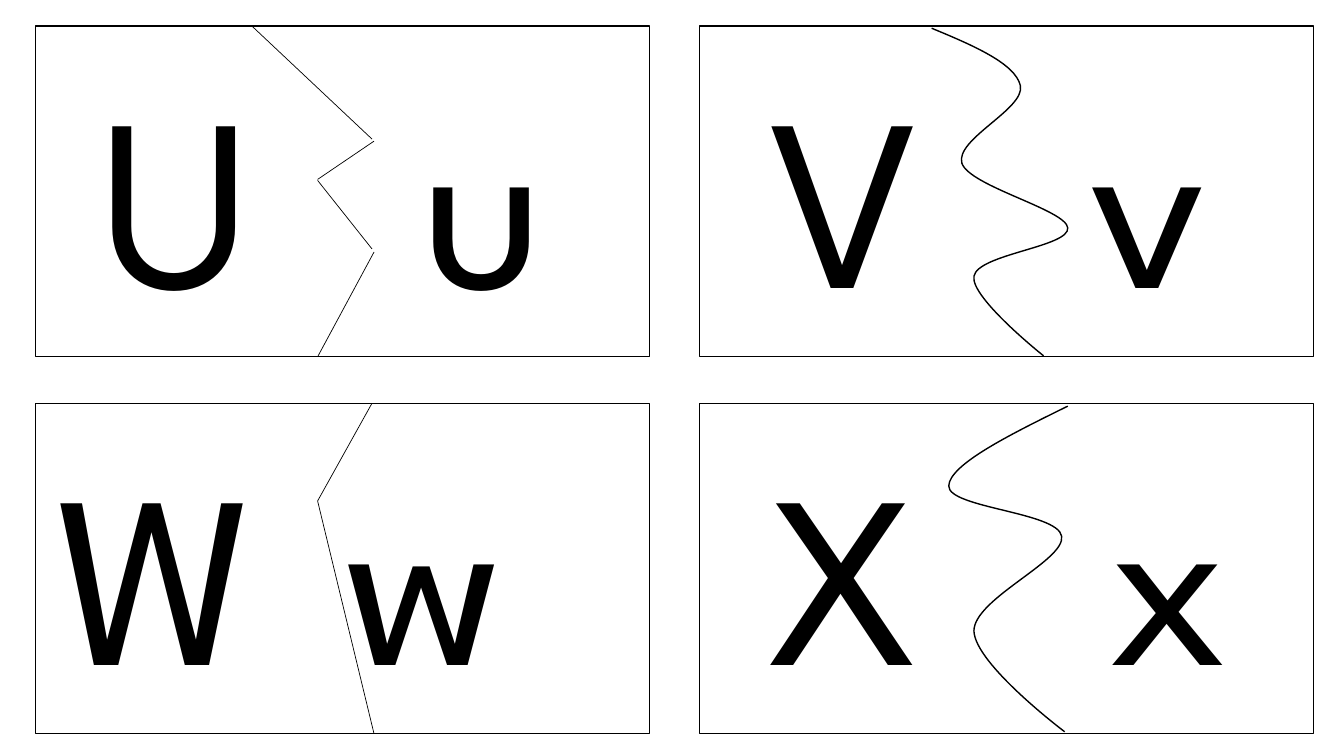
from dataclasses import dataclass

from lxml.etree import SubElement
from pptx import Presentation
from pptx.dml.color import RGBColor
from pptx.enum.shapes import MSO_CONNECTOR, MSO_SHAPE
from pptx.enum.text import MSO_AUTO_SIZE, PP_ALIGN
from pptx.oxml.ns import qn
from pptx.util import Inches, Pt

COLOURS = {"ink": "000000", "card": "FFFFFF"}
FONT = "League Spartan"
CARD_WIDTH, CARD_HEIGHT = 6.09, 3.28
LEFT, TOP = 0.35, 0.26
COLUMN_STEP, ROW_STEP = 6.59, 3.74
TEXT_INSET, TEXT_HEIGHT = 0.12, 3.05

Point = tuple[float, float]
Curve = tuple[Point, Point, Point]  # two control points and an end


@dataclass
class LetterCard:
    upper: str
    lower: str
    column: int
    row: int
    text_left: float
    text_width: float
    tab: float  # where the lower-case letter starts, inside the text area


@dataclass
class CurvedCut:
    start: Point
    curves: list[Curve]


CARDS = [
    LetterCard("U", "u", 0, 0, 0.9, 4.91, 3.18),
    LetterCard("V", "v", 1, 0, 7.53, 4.91, 3.18),
    LetterCard("W", "w", 0, 1, 0.46, 5.88, 2.85),
    LetterCard("X", "x", 1, 1, 7.53, 4.91, 3.37),
]

STRAIGHT_CUTS: list[tuple[Point, Point]] = [
    ((2.5, 0.26), (3.69, 1.38)),
    ((3.71, 1.4), (3.15, 1.78)),
    ((3.15, 1.79), (3.69, 2.47)),
    ((3.71, 2.5), (3.15, 3.54)),
    ((3.69, 4), (3.15, 4.97)),
    ((3.15, 4.97), (3.71, 7.28)),
]

CURVED_CUTS = [
    CurvedCut((9.24, 0.28), [
        ((9.65, 0.45), (10.07, 0.63), (10.12, 0.85)),
        ((10.17, 1.08), (9.47, 1.38), (9.54, 1.62)),
        ((9.62, 1.85), (10.57, 2.08), (10.59, 2.26)),
        ((10.61, 2.45), (9.7, 2.52), (9.66, 2.74)),
        ((9.62, 2.95), (10.35, 3.53), (10.35, 3.53)),
    ]),
    CurvedCut((10.59, 4.03), [
        ((10, 4.32), (9.42, 4.61), (9.41, 4.82)),
        ((9.4, 5.04), (10.49, 5.08), (10.53, 5.32)),
        ((10.57, 5.56), (9.66, 5.94), (9.66, 6.26)),
        ((9.67, 6.59), (10.56, 7.26), (10.56, 7.26)),
    ]),
]


def colour(name: str) -> RGBColor:
    return RGBColor.from_string(COLOURS[name])


def set_line(shape, width: float) -> None:
    shape.line.color.rgb = colour("ink")
    shape.line.width = Pt(width)


def add_text(page, text: str, *, left: float, top: float, width: float,
             height: float, size: float, tab: float) -> None:
    box = page.shapes.add_textbox(Inches(left), Inches(top), Inches(width), Inches(height))
    box.text_frame.word_wrap = True
    box.text_frame.auto_size = MSO_AUTO_SIZE.SHAPE_TO_FIT_TEXT
    para = box.text_frame.paragraphs[0]
    para.alignment = PP_ALIGN.LEFT
    span = para.add_run()
    span.text = text
    span.font.name = FONT
    span.font.size = Pt(size)
    span.font.color.rgb = colour("ink")
    # A tab stop sets the gap between the letters
    stops = SubElement(para._p.get_or_add_pPr(), qn("a:tabLst"))
    SubElement(stops, qn("a:tab"), pos=str(Inches(tab)), algn="l")


def draw_frame(page, card: LetterCard) -> None:
    frame = page.shapes.add_shape(
        MSO_SHAPE.RECTANGLE,
        Inches(LEFT + card.column * COLUMN_STEP), Inches(TOP + card.row * ROW_STEP),
        Inches(CARD_WIDTH), Inches(CARD_HEIGHT))
    frame.shadow.inherit = False
    frame.fill.solid()
    frame.fill.fore_color.rgb = colour("card")
    set_line(frame, 1)


def draw_letters(page, card: LetterCard) -> None:
    add_text(page, f"{card.upper}\t{card.lower}", left=card.text_left,
             top=TOP + card.row * ROW_STEP + TEXT_INSET, width=card.text_width,
             height=TEXT_HEIGHT, size=175, tab=card.tab)


def draw_straight_cut(page, start: Point, end: Point) -> None:
    cut = page.shapes.add_connector(
        MSO_CONNECTOR.STRAIGHT, *(Inches(value) for value in start + end))
    set_line(cut, 0.5)
    SubElement(cut._element.spPr, qn("a:effectLst"))


def draw_curved_cut(page, cut: CurvedCut) -> None:
    builder = page.shapes.build_freeform(*(Inches(value) for value in cut.start))
    builder.add_line_segments(
        [(Inches(x), Inches(y)) for *_, (x, y) in cut.curves], close=False)
    shape = builder.convert_to_shape()
    shape.shadow.inherit = False
    shape.fill.background()
    set_line(shape, 1)
    # Turn each straight segment into a Bézier curve
    segments = list(shape._element.iter(qn("a:lnTo")))
    for segment, curve in zip(segments, cut.curves):
        segment.tag = qn("a:cubicBezTo")
        for point in list(segment):
            segment.remove(point)
        for x, y in curve:
            SubElement(segment, qn("a:pt"), x=str(Inches(x) - shape.left),
                       y=str(Inches(y) - shape.top))


def main() -> None:
    deck = Presentation()
    deck.slide_width, deck.slide_height = Inches(13.33), Inches(7.5)
    page = deck.slides.add_slide(deck.slide_layouts[6])

    # Cards and their letters
    for card in CARDS:
        draw_frame(page, card)
    for card in CARDS:
        draw_letters(page, card)

    # Cutting lines between the letters
    for start, end in STRAIGHT_CUTS:
        draw_straight_cut(page, start, end)
    for cut in CURVED_CUTS:
        draw_curved_cut(page, cut)

    deck.save("out.pptx")


if __name__ == "__main__":
    main()
